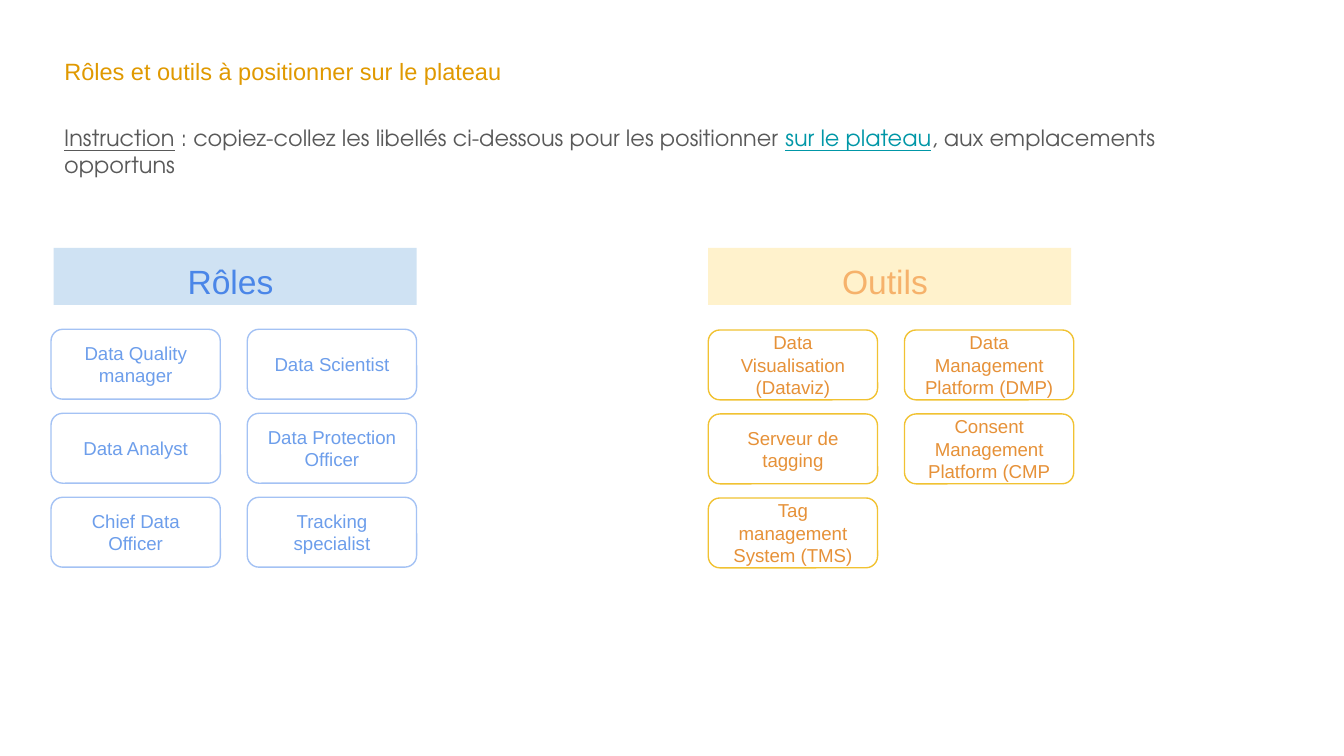
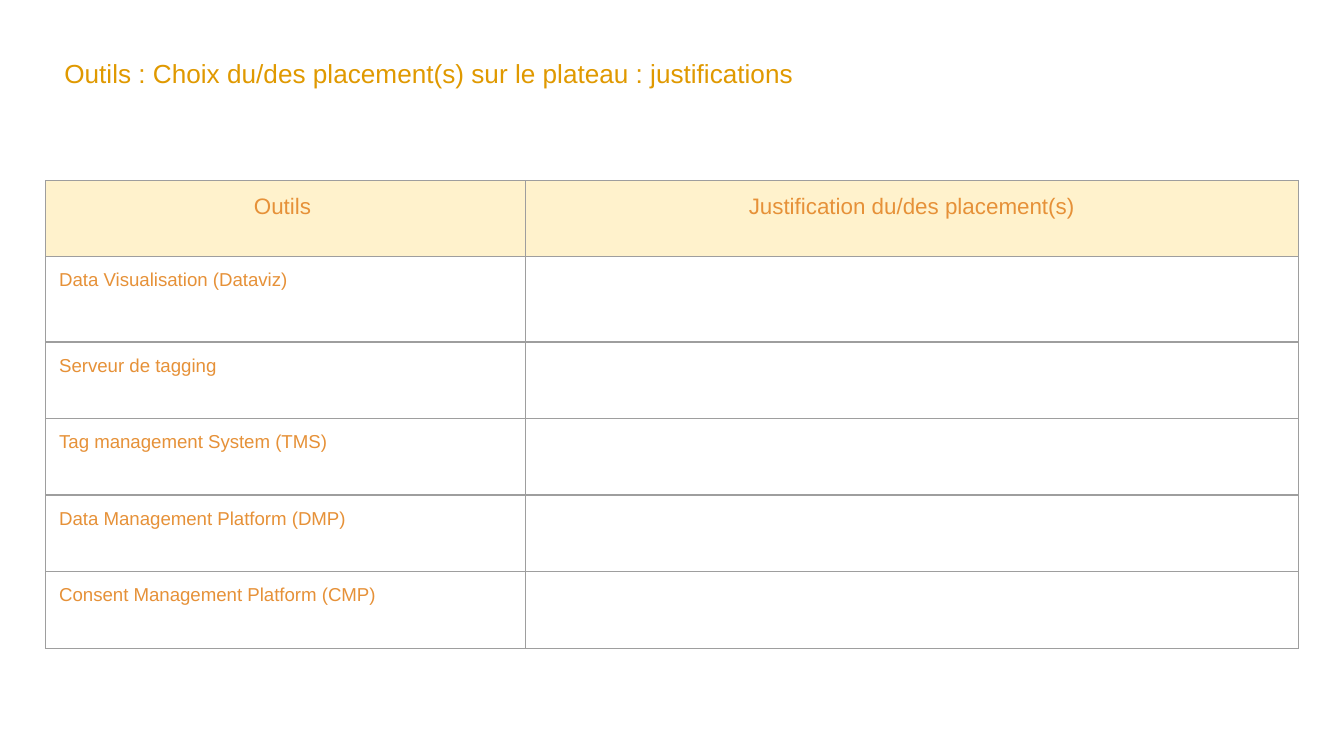
from lxml import etree
from pptx import Presentation
from pptx import util as u
from pptx.dml.color import RGBColor
from pptx.enum import shapes, text
from pptx.oxml.ns import qn

PX = 4572  # EMU per px, 200 px to the inch
INSET = 20
SANS = "Arial"
GEOMETRIC = "TeX Gyre Adventor"
GOLD, GREY, TEAL = "E09900", "595959", "0097A7"
ORANGE, CREAM, BORDER = "E69138", "FFF2CC", "9E9E9E"
CENTER = text.PP_ALIGN.CENTER

ROLES = {
    "heading": "Rôles ", "heading_color": "4A86E8", "band": "CFE2F3",
    "line": "A4C2F4", "color": "6D9EEB",
    "labels": [["Data Quality manager", "Data Analyst", "Chief Data Officer"],
               ["Data Scientist", "Data Protection Officer", "Tracking specialist"]],
}
TOOLS = {
    "heading": "Outils ", "heading_color": "F6B26B", "band": CREAM,
    "line": "F1C232", "color": ORANGE,
    "labels": [["Data Visualisation (Dataviz)", "Serveur de tagging",
                "Tag management System (TMS)"],
               ["Data Management Platform (DMP)", "Consent Management Platform (CMP"]],
}
TABLE_ROWS = [
    ("Outils ", "Justification du/des placement(s)"),
    ("Data Visualisation (Dataviz)", ""),
    ("Serveur de tagging", ""),
    ("Tag management System (TMS)", ""),
    ("Data Management Platform (DMP)", ""),
    ("Consent Management Platform (CMP)", ""),
]


def px(*lengths):
    return [u.Emu(length * PX) for length in lengths]


def rgb(color):
    return RGBColor.from_string(color)


def set_insets(target):
    """Give a text frame or a table cell the same inset on all sides."""
    for side in ("left", "top", "right", "bottom"):
        setattr(target, f"margin_{side}", u.Emu(INSET * PX))


def write(frame, words, size, color, font=SANS, align=None):
    """Fill a frame from a string or from (string, colour, underlined) spans."""
    frame.word_wrap = True
    para = frame.paragraphs[0]
    para.alignment = align
    if isinstance(words, str):
        words = [(words, color, False)]
    for part, part_color, underlined in words:
        span = para.add_run()
        span.text = part
        span.font.size = u.Pt(size)
        span.font.name = font
        span.font.color.rgb = rgb(part_color)
        span.font.underline = underlined


def add_text(page, box, words, size, color, font=SANS):
    frame = page.shapes.add_textbox(*px(*box)).text_frame
    set_insets(frame)
    write(frame, words, size, color, font)


def add_box(page, kind, box, words, size, color, fill=None, line=None,
            anchor=text.MSO_ANCHOR.MIDDLE):
    shape = page.shapes.add_shape(kind, *px(*box))
    shape.shadow.inherit = False
    if fill:
        shape.fill.solid()
        shape.fill.fore_color.rgb = rgb(fill)
    else:
        shape.fill.background()
    if line:
        shape.line.color.rgb = rgb(line)
        shape.line.width = u.Pt(0.75)
    else:
        shape.line.fill.background()
    shape.text_frame.vertical_anchor = anchor
    set_insets(shape.text_frame)
    write(shape.text_frame, words, size, color, align=CENTER)


def add_title(page, words, size, top, height):
    add_text(page, (76, top, 1864, height), words, size, GOLD)


def add_heading(page, box, group):
    add_box(page, shapes.MSO_SHAPE.RECTANGLE, box, group["heading"], 18,
            group["heading_color"], fill=group["band"], anchor=text.MSO_ANCHOR.TOP)


def add_cards(page, box, group):
    """Spread cards over two columns and three rows that fill the box."""
    left, top, width, height = box
    card_width, card_height = 252, 104
    for col, labels in enumerate(group["labels"]):
        for row, label in enumerate(labels):
            place = (left + col * (width - card_width),
                     top + row * (height - card_height) // 2,
                     card_width, card_height)
            add_box(page, shapes.MSO_SHAPE.ROUNDED_RECTANGLE, place, label, 10,
                    group["color"], line=group["line"])


def add_borders(cell):
    properties = cell._tc.get_or_add_tcPr()
    for side in ("lnL", "lnR", "lnT", "lnB"):
        line = etree.SubElement(properties, qn(f"a:{side}"), w=str(u.Pt(0.75)))
        fill = etree.SubElement(line, qn("a:solidFill"))
        etree.SubElement(fill, qn("a:srgbClr"), val=BORDER)


def add_table(page, left, top, widths, heights, rows):
    box = (left, top, sum(widths), sum(heights))
    table = page.shapes.add_table(len(rows), len(widths), *px(*box)).table
    table.horz_banding = table.first_row = False
    for column, width in zip(table.columns, px(*widths)):
        column.width = width
    for row, height in zip(table.rows, px(*heights)):
        row.height = height
    for r, labels in enumerate(rows):
        header = r == 0
        for c, label in enumerate(labels):
            cell = table.cell(r, c)
            set_insets(cell)
            add_borders(cell)
            if header:
                cell.fill.solid()
                cell.fill.fore_color.rgb = rgb(CREAM)
            else:
                cell.fill.background()
            if label:
                write(cell.text_frame, label, 12 if header else 10, ORANGE,
                      align=CENTER if header else None)


def build_labels_slide(page):
    add_title(page, "Rôles et outils à positionner sur le plateau", 12.6, 65, 86)
    add_cards(page, (76, 490, 544, 354), ROLES)
    add_cards(page, (1054, 491, 544, 354), TOOLS)
    add_heading(page, (80, 369, 540, 85), ROLES)
    add_heading(page, (1054, 369, 540, 85), TOOLS)
    instruction = [
        ("Instruction", GREY, True),
        (" : copiez-collez les libellés ci-dessous pour les positionner ", GREY, False),
        ("sur le plateau", TEAL, True),
        (", aux emplacements opportuns", GREY, False),
    ]
    add_text(page, (76, 165, 1826, 116), instruction, 12, GREY, GEOMETRIC)


def build_reasons_slide(page):
    add_title(page, "Outils : Choix du/des placement(s) sur le plateau : justifications",
              14, 66, 126)
    add_table(page, 68, 269, (714, 1150), (113, 127, 114, 114, 114, 114), TABLE_ROWS)


def main():
    deck = Presentation()
    deck.slide_width, deck.slide_height = px(2000, 1125)
    for build in (build_labels_slide, build_reasons_slide):
        build(deck.slides.add_slide(deck.slide_layouts[6]))
    deck.save("out.pptx")


if __name__ == "__main__":
    main()
